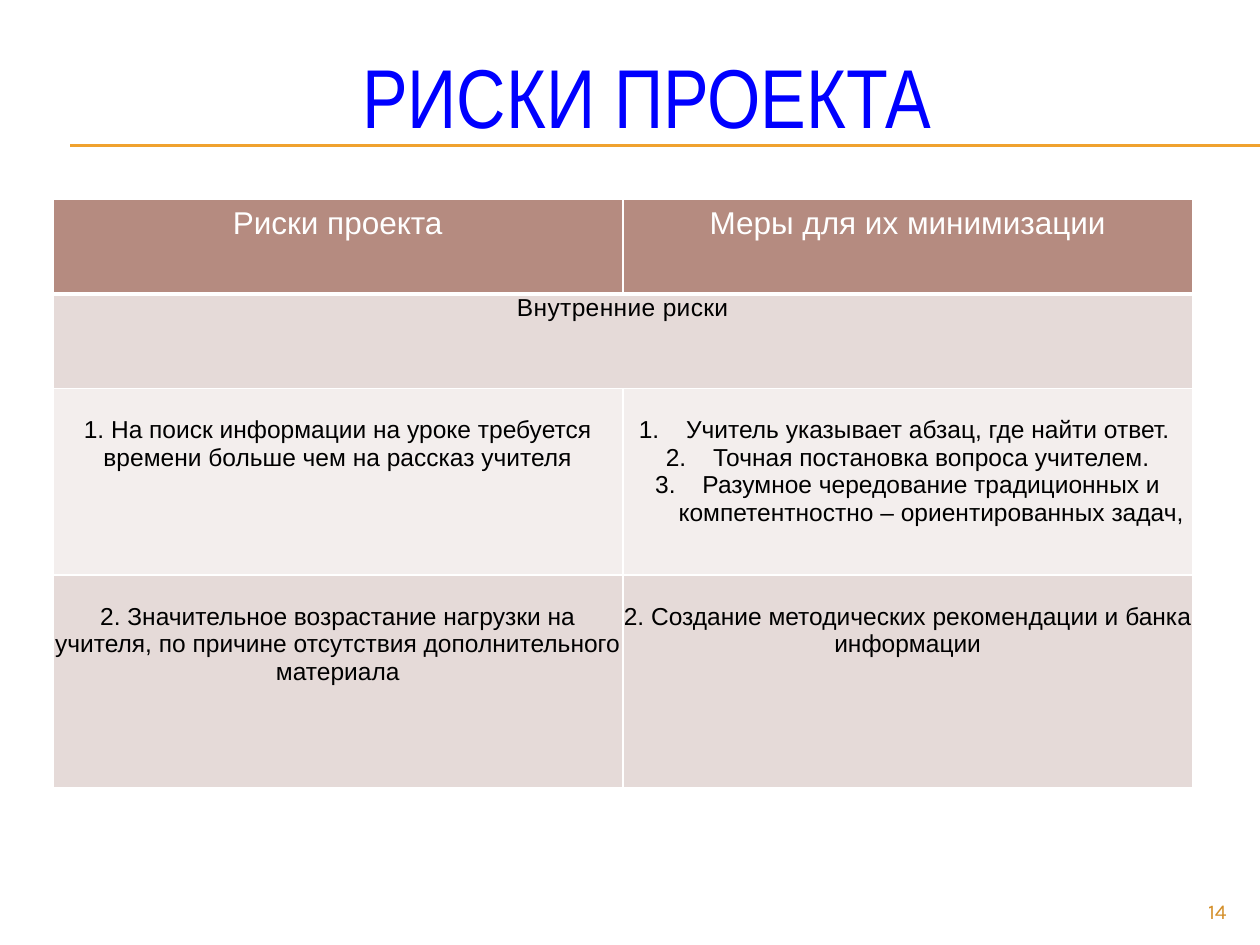
from dataclasses import dataclass

from pptx import Presentation
from pptx.dml.color import RGBColor
from pptx.enum import shapes, text
from pptx.oxml import ns
from pptx.util import Pt
from lxml import etree

CENTER, RIGHT = text.PP_ALIGN.CENTER, text.PP_ALIGN.RIGHT
HEADER, DARK, LIGHT = "B58B80", "E5DAD8", "F3EEED"
LIST_INDENT = 27


@dataclass
class Entry:
    """One table cell: its paragraphs and their look."""
    row: int
    column: int
    paragraphs: list[str]
    fill: str
    size: float = 14
    color: str = "000000"
    margins: tuple = (0, 0, 0, 0)  # left, top, right, bottom
    numbered: bool = False
    spacing: int = 0
    columns: int = 1


def rgb(value: str) -> RGBColor:
    return RGBColor.from_string(value)


def child(parent, tag: str, **attributes):
    return etree.SubElement(parent, ns.qn(tag), attributes)


def write(frame, paragraphs: list[str], *, size: float, color: str, font="Arial",
          align=CENTER, numbered=False, spacing=0) -> None:
    for index, line in enumerate(paragraphs):
        paragraph = frame.paragraphs[0] if index == 0 else frame.add_paragraph()
        paragraph.alignment = align
        if numbered:
            properties = paragraph._p.get_or_add_pPr()
            properties.set("marL", str(Pt(LIST_INDENT)))
            properties.set("indent", str(-Pt(LIST_INDENT)))
            child(properties, "a:buFont", typeface="+mj-lt")
            child(properties, "a:buAutoNum", type="arabicPeriod")
        run = paragraph.add_run()
        run.text = line
        run.font.name, run.font.size = font, Pt(size)
        run.font.color.rgb = rgb(color)
        if spacing:
            run._r.get_or_add_rPr().set("spc", str(spacing))


def set_margins(target, margins: tuple) -> None:
    (target.margin_left, target.margin_top,
     target.margin_right, target.margin_bottom) = map(Pt, margins)


def add_text(slide, box: tuple, line: str, *, margins=(7.2, 3.6, 7.2, 3.6),
             anchor=text.MSO_ANCHOR.TOP, **style) -> None:
    frame = slide.shapes.add_textbox(*map(Pt, box)).text_frame
    frame.word_wrap = True
    frame.vertical_anchor = anchor
    set_margins(frame, margins)
    write(frame, [line], **style)


def add_rule(slide, left: float, right: float, y: float) -> None:
    rule = slide.shapes.add_connector(
        shapes.MSO_CONNECTOR.STRAIGHT, Pt(left), Pt(y), Pt(right), Pt(y))
    rule.line.color.rgb, rule.line.width = rgb("F0A22E"), Pt(0.75)
    child(rule._element.spPr, "a:effectLst")


def set_borders(cell, bottom: float) -> None:
    properties = cell._tc.get_or_add_tcPr()
    for side, width in (("L", 1), ("R", 1), ("T", 1), ("B", bottom)):
        line = child(properties, f"a:ln{side}", w=str(Pt(width)))
        child(child(line, "a:solidFill"), "a:srgbClr", val="FFFFFF")


def fill_cell(table, entry: Entry) -> None:
    cell = table.cell(entry.row, entry.column)
    if entry.columns > 1:
        cell.merge(table.cell(entry.row, entry.column + entry.columns - 1))
    set_borders(cell, 3 if entry.row == 0 else 1)
    cell.fill.solid()
    cell.fill.fore_color.rgb = rgb(entry.fill)
    set_margins(cell, entry.margins)
    write(cell.text_frame, entry.paragraphs, size=entry.size, color=entry.color,
          numbered=entry.numbered, spacing=entry.spacing)


HEADING = dict(fill=HEADER, size=18, color="FFFFFF", margins=(7.2, 3.6, 7.2, 3.6))
LOWERED = (0, 16, 0, 0)
ENTRIES = [
    Entry(0, 0, ["Риски проекта"], **HEADING),
    Entry(0, 1, ["Меры для их минимизации"], **HEADING),
    Entry(1, 0, ["Внутренние риски"], DARK, spacing=20, columns=2),
    Entry(2, 0, ["1. На поиск информации на уроке требуется времени больше "
                 "чем на рассказ учителя"], LIGHT, margins=LOWERED),
    Entry(2, 1, ["Учитель указывает абзац, где найти ответ. ",
                 "Точная постановка вопроса учителем.",
                 "Разумное чередование традиционных и компетентностно – "
                 "ориентированных задач,"], LIGHT, margins=LOWERED, numbered=True),
    Entry(3, 0, ["2. Значительное возрастание нагрузки на учителя, по причине "
                 "отсутствия дополнительного материала"], DARK, margins=LOWERED),
    Entry(3, 1, ["2. Создание методических рекомендации и банка информации"],
          DARK, margins=LOWERED),
]


def main() -> None:
    presentation = Presentation()
    presentation.slide_width, presentation.slide_height = Pt(720), Pt(540)
    slide = presentation.slides.add_slide(presentation.slide_layouts[6])

    # Double rule under the title
    for y in (82.8, 83.5):
        add_rule(slide, 40.3, 720, y)

    # Title, raised above the rule by its bottom margin
    add_text(slide, (23.8, 36, 684, 66.2), "РИСКИ ПРОЕКТА",
             margins=(15, 0, 7.2, 30), anchor=text.MSO_ANCHOR.MIDDLE,
             size=47.7, color="0000FF", font="Arial Narrow")

    # Table of risks and measures
    heights = (54, 54, 106.5, 121.7)
    table = slide.shapes.add_table(
        len(heights), 2, Pt(30.2), Pt(114), Pt(651.4), Pt(sum(heights))).table
    for row, height in zip(table.rows, heights):
        row.height = Pt(height)
    for entry in ENTRIES:
        fill_cell(table, entry)

    # Page number
    add_text(slide, (648, 510, 60, 19.5), "14", size=12, color="D48F29",
             font="Karla", align=RIGHT)

    presentation.save("out.pptx")


if __name__ == "__main__":
    main()
